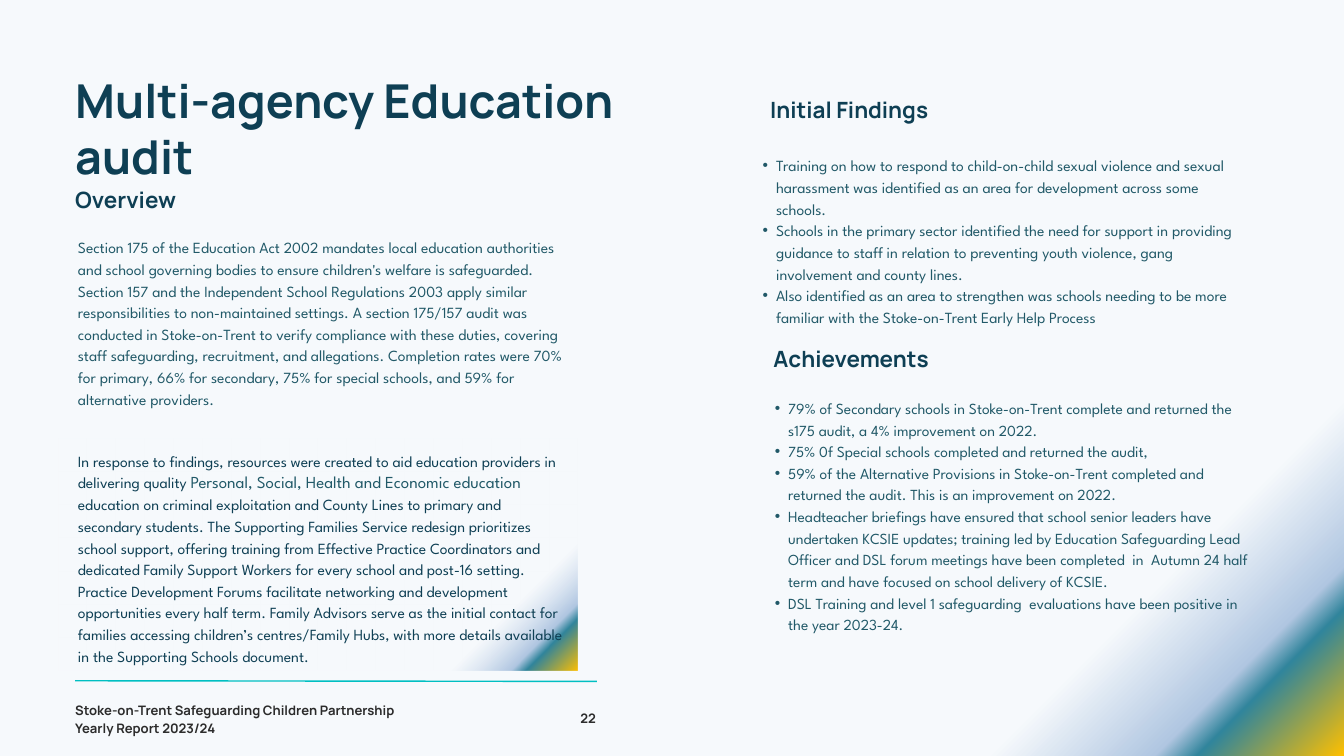
from dataclasses import dataclass

from pptx import Presentation
from pptx import util as u
from pptx.dml import color as colors
from pptx.enum import shapes, text
from pptx.oxml import parse_xml
from pptx.oxml.ns import nsdecls


@dataclass(frozen=True)
class Theme:
    navy: str = "0E3F54"
    teal: str = "215968"
    charcoal: str = "2B2B2B"
    aqua: str = "01BFC2"
    # position in %, colour, opacity in %
    glow: tuple = ((0, "FFC000", 100), (7, "31859C", 100),
                   (9, "B0C6E1", 100), (17, "F6F9FC", 65))
    heading_font: str = "Manrope"
    body_font: str = "League Spartan"
    title_size: float = 50
    heading_size: float = 24
    emphasis_size: float = 18
    body_size: float = 16.6
    list_size: float = 16.5
    footer_size: float = 14


class Page:
    def __init__(self, slide, theme):
        self.slide = slide
        self.theme = theme

    def glow(self, fill, owner):
        """Fill with a circular gradient centred on the bottom right corner."""
        fill.gradient()
        stops = "".join(
            f'<a:gs pos="{place * 1000}"><a:srgbClr val="{colour}">'
            f'<a:alpha val="{opacity * 1000}"/></a:srgbClr></a:gs>'
            for place, colour, opacity in self.theme.glow)
        gradient = owner.xpath(".//a:gradFill")[0]
        gradient.getparent().replace(gradient, parse_xml(
            f'<a:gradFill {nsdecls("a")} rotWithShape="1"><a:gsLst>{stops}</a:gsLst>'
            '<a:path path="circle"><a:fillToRect l="100000" t="100000"/></a:path>'
            '</a:gradFill>'))

    def background(self):
        self.glow(self.slide.background.fill, self.slide._element)

    def panel(self, *box):
        panel = self.slide.shapes.add_shape(shapes.MSO_SHAPE.RECTANGLE, *map(u.Pt, box))
        panel.shadow.inherit = False
        panel.line.fill.background()
        self.glow(panel.fill, panel._element)

    def rule(self, *ends):
        rule = self.slide.shapes.add_connector(
            shapes.MSO_CONNECTOR.STRAIGHT, *map(u.Pt, ends))
        rule.line.color.rgb = colors.RGBColor.from_string(self.theme.aqua)
        rule.line.width = u.Pt(1.5)
        rule._element.spPr.append(parse_xml(f'<a:effectLst {nsdecls("a")}/>'))

    def text_block(self, box, paragraphs, style, spacing, bullets=False, align=None):
        """Each paragraph is a string or a list of (string, style changes)."""
        frame = self.slide.shapes.add_textbox(*map(u.Pt, box)).text_frame
        layout = dict(margin_left=0, margin_top=0, margin_right=0, margin_bottom=0,
                      word_wrap=True, auto_size=text.MSO_AUTO_SIZE.SHAPE_TO_FIT_TEXT)
        for name, value in layout.items():
            setattr(frame, name, value)
        for index, content in enumerate(paragraphs):
            paragraph = frame.add_paragraph() if index else frame.paragraphs[0]
            if bullets:
                self.bullet(paragraph)
            paragraph.line_spacing = u.Pt(spacing)
            paragraph.alignment = align
            runs = [(content, {})] if isinstance(content, str) else content
            for words, changes in runs:
                run = paragraph.add_run()
                run.text = words
                look = {**style, **changes}
                run.font.color.rgb = colors.RGBColor.from_string(look.pop("color"))
                for name, value in look.items():
                    setattr(run.font, name, value)

    def bullet(self, paragraph):
        paragraph.level = 1
        properties = paragraph._p.get_or_add_pPr()
        properties.set("marL", str(u.Pt(28)))
        properties.set("indent", str(u.Pt(-14.4)))
        for element in ('buFont typeface="Arial"', 'buChar char="•"'):
            name, attribute = element.split(" ", 1)
            properties.append(parse_xml(f'<a:{name} {nsdecls("a")} {attribute}/>'))

    def title(self, box, words):
        self.text_block(box, [words], self.bold(self.theme.title_size, self.theme.navy), 60)

    def heading(self, box, words):
        self.text_block(box, [words],
                        self.bold(self.theme.heading_size, self.theme.navy), 28.8)

    def footer(self, box, lines, align=None):
        self.text_block(box, lines, self.bold(self.theme.footer_size, self.theme.charcoal),
                        19.6, align=align)

    def body(self, box, paragraphs, color, size=None, bullets=False):
        style = dict(name=self.theme.body_font, color=color,
                     size=u.Pt(size or self.theme.body_size))
        self.text_block(box, paragraphs, style, 23.2, bullets)

    def bold(self, size, color):
        return dict(name=self.theme.heading_font, size=u.Pt(size), color=color, bold=True)


OVERVIEW = (
    "Section 175 of the Education Act 2002 mandates local education authorities and "
    "school governing bodies to ensure children's welfare is safeguarded. Section 157 "
    "and the Independent School Regulations 2003 apply similar responsibilities to "
    "non-maintained settings. A section 175/157 audit was conducted in Stoke-on-Trent "
    "to verify compliance with these duties, covering staff safeguarding, recruitment, "
    "and allegations. Completion rates were 70% for primary, 66% for secondary, 75% for "
    "special schools, and 59% for alternative providers.")

RESPONSE = (
    "In response to findings, resources were created to aid education providers in "
    "delivering quality ",
    "Personal, Social, Health and Economic education",
    " education on criminal exploitation and County Lines to primary and secondary "
    "students. The Supporting Families Service redesign prioritizes school support, "
    "offering training from Effective Practice Coordinators and dedicated Family Support "
    "Workers for every school and post-16 setting. Practice Development Forums facilitate "
    "networking and development opportunities every half term. Family Advisors serve as "
    "the initial contact for families accessing children’s centres/Family Hubs, with more "
    "details available in the Supporting Schools document.")

FINDINGS = [
    "Training on how to respond to child-on-child sexual violence and sexual harassment "
    "was identified as an area for development across some schools.",
    "Schools in the primary sector identified the need for support in providing guidance "
    "to staff in relation to preventing youth violence, gang involvement and county lines.",
    "Also identified as an area to strengthen was schools needing to be more familiar "
    "with the Stoke-on-Trent Early Help Process",
]

ACHIEVEMENTS = [
    "79% of Secondary schools in Stoke-on-Trent complete and returned the s175 audit, "
    "a 4% improvement on 2022.",
    "75% 0f Special schools completed and returned the audit,",
    "59% of the Alternative Provisions in Stoke-on-Trent completed and returned the "
    "audit. This is an improvement on 2022.",
    "Headteacher briefings have ensured that school senior leaders have undertaken KCSIE "
    "updates; training led by Education Safeguarding Lead Officer and DSL forum meetings "
    "have been completed  in  Autumn 24 half term and have focused on school delivery "
    "of KCSIE.",
    "DSL Training and level 1 safeguarding  evaluations have been positive in the year "
    "2023-24.",
]


def main():
    theme = Theme()
    deck = Presentation()
    deck.slide_width, deck.slide_height = u.Pt(1440), u.Pt(810)
    page = Page(deck.slides.add_slide(deck.slide_layouts[6]), theme)
    left, body_left, body_width = 80.6, 83.5, 520.6

    page.background()
    page.rule(left, 729.4, 639.4, 730.1)
    page.panel(62.6, 470.2, 555.8, 248.4)

    page.title((left, 77, 617, 121), "Multi-agency Education audit")
    page.heading((left, 199.4, 556, 30), "Overview")
    page.body((body_left, 252, body_width, 208), [OVERVIEW], theme.teal)
    opening, subject, rest = RESPONSE
    emphasis = dict(size=u.Pt(theme.emphasis_size), color=theme.teal)
    page.body((body_left, 481, body_width, 255),
              [[(opening, {}), (subject, emphasis), (rest, {})]], theme.navy)

    page.heading((825.1, 103, 617, 30), "Initial Findings")
    page.body((803.5, 164.3, 537.8, 208), FINDINGS, theme.teal, bullets=True)
    page.heading((828.7, 370.1, 617, 30), "Achievements")
    page.body((816.5, 424.1, 524.2, 301), ACHIEVEMENTS, theme.teal,
              theme.list_size, bullets=True)

    page.footer((left, 749.5, 394.6, 39.6),
                ["Stoke-on-Trent Safeguarding Children Partnership", "Yearly Report 2023/24"])
    page.footer((556.6, 758.2, 82, 19.4), ["22"], text.PP_ALIGN.RIGHT)
    deck.save("out.pptx")


if __name__ == "__main__":
    main()
